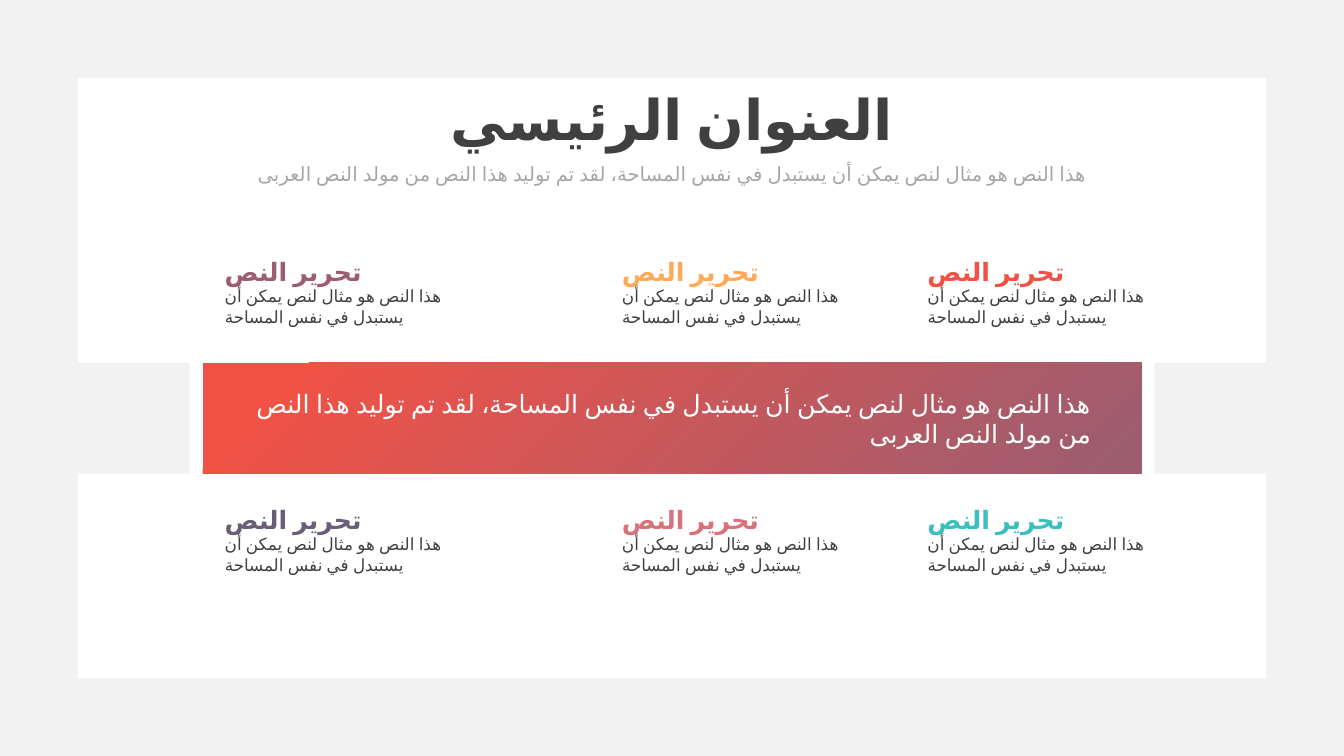
from lxml import etree
from pptx import Presentation
from pptx.dml.color import RGBColor
from pptx.enum.lang import MSO_LANGUAGE_ID
from pptx.enum.shapes import MSO_SHAPE
from pptx.enum.text import MSO_AUTO_SIZE, PP_ALIGN
from pptx.oxml.ns import qn
from pptx.util import Inches, Pt

FRAME, RECTANGLE = MSO_SHAPE.FRAME, MSO_SHAPE.RECTANGLE
LEFT, CENTER, RIGHT = PP_ALIGN.LEFT, PP_ALIGN.CENTER, PP_ALIGN.RIGHT
FIT_TEXT = MSO_AUTO_SIZE.SHAPE_TO_FIT_TEXT
ARABIC = MSO_LANGUAGE_ID.ARABIC_EGYPT

FONT = "Lato"
GREY, DARK, RED, PLUM = "F2F2F2", "404040", "F25245", "9C5D71"
WIDTH, HEIGHT = 13.33, 7.5

BAND_TOP, BAND_HEIGHT = 3.6, 1.1
TAB_LEFT, TAB_WIDTH = 0.76, 1.12
BAND_GAP = 0.13
BAND_LEFT = TAB_LEFT + TAB_WIDTH + BAND_GAP

SENTENCE = "هذا النص هو مثال لنص يمكن أن يستبدل في نفس المساحة"
LONG_SENTENCE = SENTENCE + "، لقد تم توليد هذا النص من مولد النص العربى"

COLUMN_LEFTS = [9.1, 6.07, 2.13]
ROW_TOPS = [2.49, 4.95]
HEADING_COLORS = [
    [RED, "FFA956", PLUM],
    ["3BBEBE", "D8717B", "695E78"],
]


def add_panel(kind, left, top, width, height, color=GREY):
    """Add a borderless filled shape, measured in inches."""
    shape = slide.shapes.add_shape(
        kind, Inches(left), Inches(top), Inches(width), Inches(height))
    shape.shadow.inherit = False
    shape.line.fill.background()
    shape.fill.solid()
    shape.fill.fore_color.rgb = RGBColor.from_string(color)
    return shape


def add_text(shapes, text, left, top, width, height, size, color,
             bold=False, align=LEFT):
    """Add a wrapped one-paragraph text box, measured in inches."""
    box = shapes.add_textbox(
        Inches(left), Inches(top), Inches(width), Inches(height))
    frame = box.text_frame
    frame.word_wrap = True
    frame.auto_size = FIT_TEXT
    paragraph = frame.paragraphs[0]
    paragraph.text = text
    paragraph.alignment = align
    paragraph.runs[0].font.language_id = ARABIC
    font = paragraph.font
    font.name, font.size, font.bold = FONT, Pt(size), bold
    font.language_id = ARABIC
    font.color.rgb = RGBColor.from_string(color)
    # Arabic letters take the complex-script typeface
    properties = paragraph._p.pPr.find(qn("a:defRPr"))
    etree.SubElement(properties, qn("a:cs"), typeface=FONT)


presentation = Presentation()
presentation.slide_width = Inches(WIDTH)
presentation.slide_height = Inches(HEIGHT)
slide = presentation.slides.add_slide(presentation.slide_layouts[6])

# Frame around the slide
border = add_panel(FRAME, 0, 0, WIDTH, HEIGHT)
border.adjustments[0] = 0.103

# Middle band between two side tabs
for left in (TAB_LEFT, WIDTH - TAB_LEFT - TAB_WIDTH):
    add_panel(RECTANGLE, left, BAND_TOP, TAB_WIDTH, BAND_HEIGHT)
band = add_panel(RECTANGLE, BAND_LEFT, BAND_TOP, WIDTH - 2 * BAND_LEFT, BAND_HEIGHT)
band.fill.gradient()
band.fill.gradient_angle = 315
for stop, position, color in zip(band.fill.gradient_stops, (0.08, 0.98), (RED, PLUM)):
    stop.position = position
    stop.color.rgb = RGBColor.from_string(color)

# Two rows of three headed texts
for top, colors in zip(ROW_TOPS, HEADING_COLORS):
    for left, color in zip(COLUMN_LEFTS, colors):
        group = slide.shapes.add_group_shape()
        add_text(group.shapes, SENTENCE, left, top + 0.3, 2.52, 0.5, 12, DARK)
        add_text(group.shapes, "تحرير النص", left, top, 2.94, 0.4, 18, color, bold=True)

# Title, subtitle and band text
add_text(slide.shapes, "العنوان الرئيسي", TAB_LEFT, 0.79, WIDTH - 2 * TAB_LEFT, 0.77,
         40, DARK, bold=True, align=CENTER)
add_text(slide.shapes, LONG_SENTENCE, 2.41, 1.56, 8.51, 0.57, 14, "A6A6A6", align=CENTER)
add_text(slide.shapes, LONG_SENTENCE, 2.41, 3.8, 8.51, 0.71, 18, "FFFFFF", align=RIGHT)

presentation.save("out.pptx")
